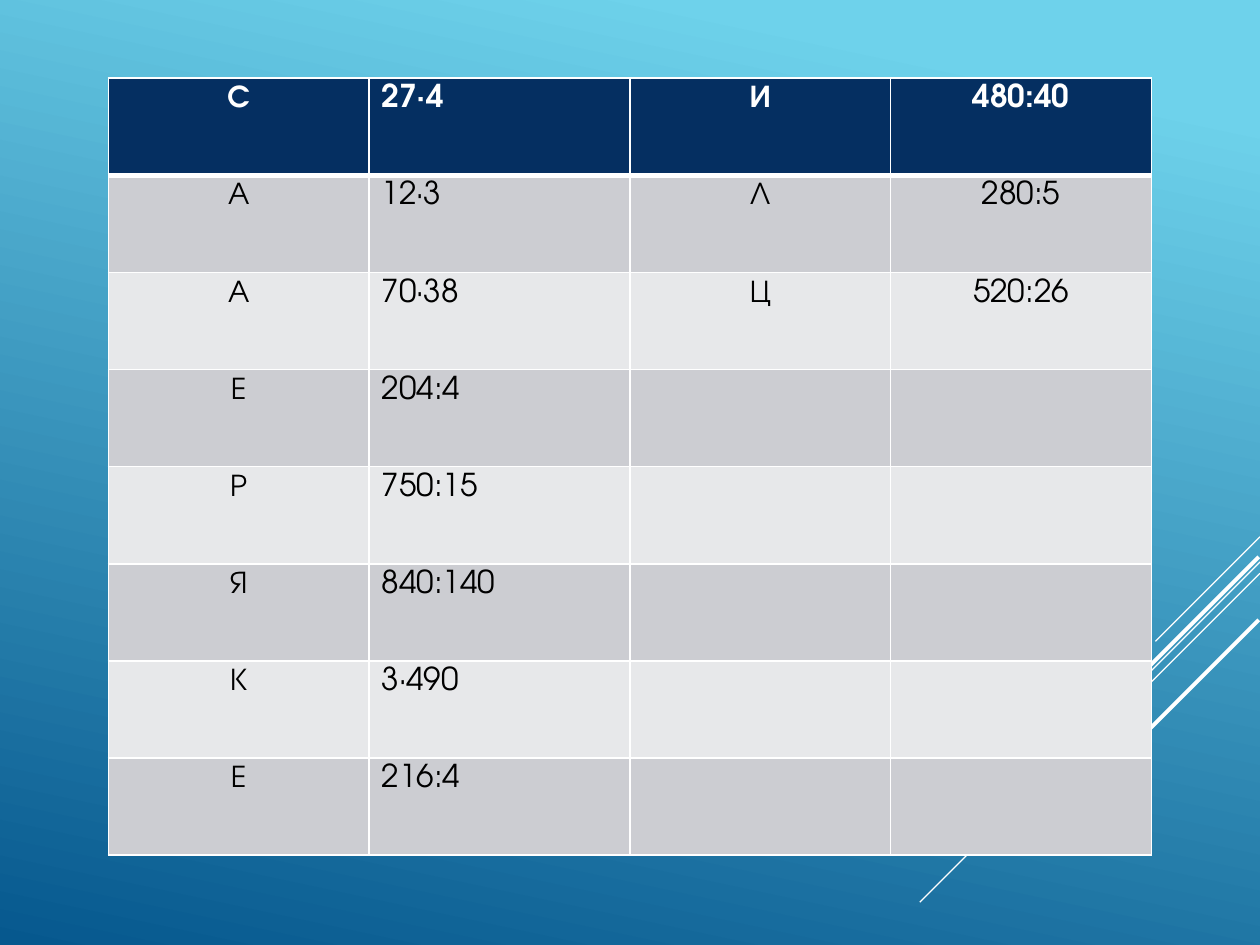
from lxml import etree
from pptx import Presentation
from pptx.dml.color import RGBColor
from pptx.enum.shapes import MSO_CONNECTOR
from pptx.enum.text import PP_ALIGN
from pptx.oxml.ns import qn
from pptx.util import Inches, Pt

STRAIGHT = MSO_CONNECTOR.STRAIGHT
LEFT, CENTER = PP_ALIGN.LEFT, PP_ALIGN.CENTER

WHITE = RGBColor(0xFF, 0xFF, 0xFF)
BLACK = RGBColor(0x00, 0x00, 0x00)
NAVY = RGBColor(0x05, 0x2F, 0x61)
GREY = RGBColor(0xCC, 0xCD, 0xD2)
PALE_GREY = RGBColor(0xE7, 0xE8, 0xEA)
SKY = RGBColor(0x6E, 0xD2, 0xEB)
DEEP_BLUE = RGBColor(0x06, 0x58, 0x8E)

FONT = "TeX Gyre Adventor"
TABLE_BOX = (0.86, 0.62, 8.28, 6.17)
ALIGNMENTS = (CENTER, LEFT, CENTER, CENTER)
ROWS = [
    ("С", "27·4", "И", "480:40"),
    ("А", "12·3", "Л", "280:5"),
    ("А", "70·38", "Ц", "520:26"),
    ("Е", "204:4", "", ""),
    ("Р", "750:15", "", ""),
    ("Я", "840:140", "", ""),
    ("К", "3·490", "", ""),
    ("Е", "216:4", "", ""),
]
# Right end x, right end y, horizontal run, line width
DIAGONALS = [
    (10, 4.26, 0.83, 0.75),
    (10, 4.46, 2.7, 0.75),
    (10, 4.55, 1.72, 0.75),
    (9.99, 4.42, 1.57, 2.25),
    (9.99, 4.92, 1.14, 2.25),
]


def fill_background(slide):
    fill = slide.background.fill
    fill.gradient()
    fill.gradient_angle = 360 - 102
    for stop, position, color in zip(fill.gradient_stops, (0.1, 1), (SKY, DEEP_BLUE)):
        stop.position = position
        stop.color.rgb = color


def add_diagonal(slide, x, y, run, width):
    """Draw a 45-degree line down and to the left from its right end."""
    line = slide.shapes.add_connector(
        STRAIGHT, Inches(x), Inches(y), Inches(x - run), Inches(y + run))
    line.line.color.rgb = WHITE
    line.line.width = Pt(width)
    etree.SubElement(line._element.spPr, qn("a:effectLst"))


def set_borders(cell, widths):
    """Add white borders; widths are points for left, right, top, bottom."""
    properties = cell._tc.get_or_add_tcPr()
    for index, (side, width) in enumerate(zip("LRTB", widths)):
        border = etree.Element(qn(f"a:ln{side}"), w=str(Pt(width)))
        solid = etree.SubElement(border, qn("a:solidFill"))
        etree.SubElement(solid, qn("a:srgbClr"), val=str(WHITE))
        properties.insert(index, border)


def format_cell(cell, text, alignment, fill, color, bold):
    cell.fill.solid()
    cell.fill.fore_color.rgb = fill
    cell.text_frame.text = text
    paragraph = cell.text_frame.paragraphs[0]
    paragraph.alignment = alignment
    for font in [paragraph.font] + [run.font for run in paragraph.runs]:
        font.name = FONT
        font.size = Pt(18)
        font.bold = bold
        font.color.rgb = color


def add_task_table(slide):
    box = [Inches(length) for length in TABLE_BOX]
    table = slide.shapes.add_table(len(ROWS), len(ALIGNMENTS), *box).table
    for row_index, texts in enumerate(ROWS):
        header = row_index == 0
        fill = NAVY if header else (PALE_GREY, GREY)[row_index % 2]
        top = 3 if row_index == 1 else 1
        bottom = 3 if header else 1
        for column, (text, alignment) in enumerate(zip(texts, ALIGNMENTS)):
            cell = table.cell(row_index, column)
            format_cell(cell, text, alignment, fill, WHITE if header else BLACK, header)
            set_borders(cell, (1, 1, top, bottom))


def main():
    presentation = Presentation()
    presentation.slide_width = Inches(10)
    presentation.slide_height = Inches(7.5)
    slide = presentation.slides.add_slide(presentation.slide_layouts[6])
    fill_background(slide)
    for diagonal in DIAGONALS:
        add_diagonal(slide, *diagonal)
    add_task_table(slide)
    presentation.save("out.pptx")


if __name__ == "__main__":
    main()
